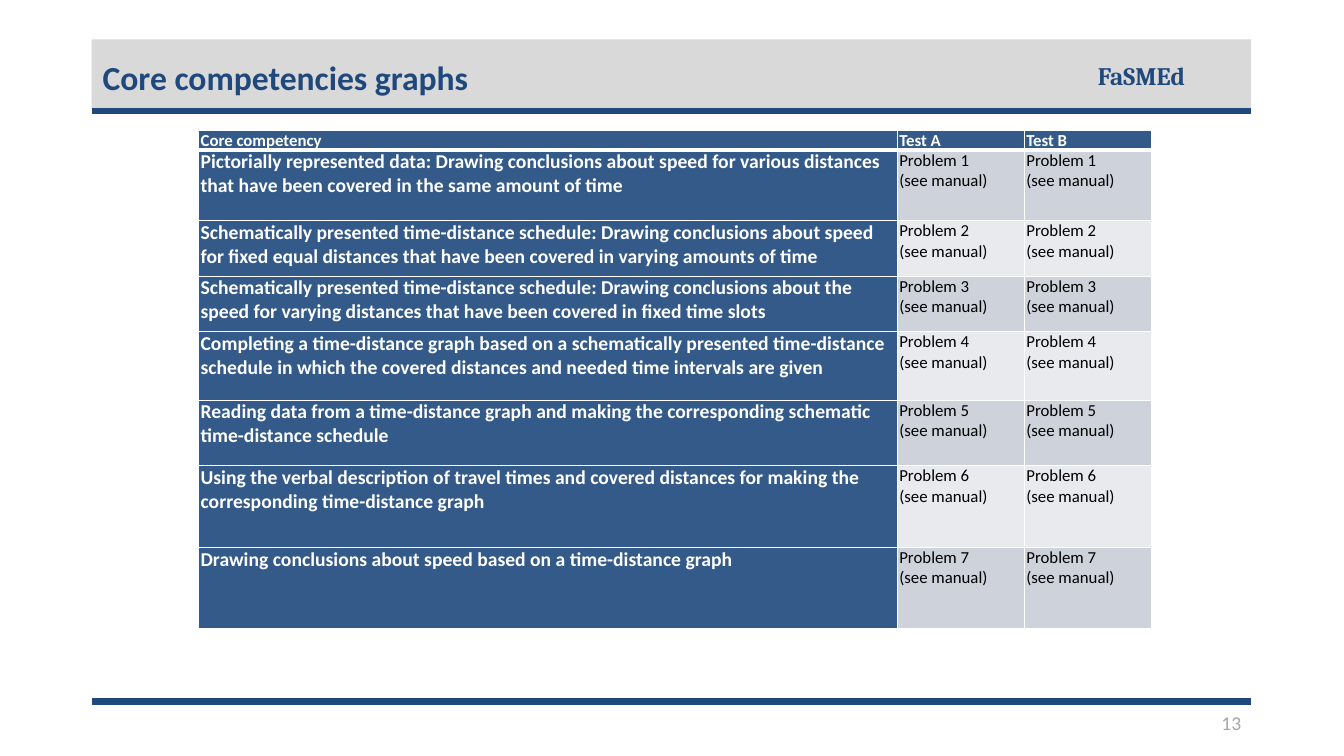
"""Build the slide on core competencies for graphs."""
from lxml.etree import SubElement
from pptx import Presentation
from pptx.dml.color import RGBColor
from pptx.enum.shapes import MSO_CONNECTOR as LINE, MSO_SHAPE as SHAPE
from pptx.enum.text import MSO_ANCHOR as ANCHOR, PP_ALIGN as ALIGN
from pptx.oxml.ns import qn
from pptx.util import Inches, Pt

NAVY, STEEL, WHITE = "1F497D", "345A8A", "FFFFFF"
BANDS = ["CED2DA", "E8EAED"]
HEADS = ["Core competency", "Test A", "Test B"]
SKILLS = [
    ("Pictorially represented data: Drawing conclusions about speed for various "
     "distances that have been covered in the same amount of time", 0.7),
    ("Schematically presented time-distance schedule: Drawing conclusions about speed "
     "for fixed equal distances that have been covered in varying amounts of time", 0.55),
    ("Schematically presented time-distance schedule: Drawing conclusions about the "
     "speed for varying distances that have been covered in fixed time slots", 0.55),
    ("Completing a time-distance graph based on a schematically presented time-distance "
     "schedule in which the covered distances and needed time intervals are given", 0.68),
    ("Reading data from a time-distance graph and making the corresponding schematic "
     "time-distance schedule", 0.65),
    ("Using the verbal description of travel times and covered distances for making the "
     "corresponding time-distance graph", 0.81),
    ("Drawing conclusions about speed based on a time-distance graph", 0.81),
]
WIDTHS = [6.93, 1.26, 1.26]
HEAD_H = 0.2
LEFT, RIGHT = 0.91, 12.41
RULES = [1.1, 6.96]
LABELS = [
    ("13", (10.44, 7, 1.97, 0.34), ANCHOR.MIDDLE, ALIGN.RIGHT,
     dict(size=14, name="Calibri", color="A6A6A6")),
    ("FaSMEd", (10.79, 0.55, 1.11, 0.4), ANCHOR.TOP, ALIGN.LEFT,
     dict(size=18, name="Cambria", color=NAVY, bold=True)),
    ("Core competencies graphs", (0.92, 0.41, 11.5, 0.71), ANCHOR.MIDDLE, ALIGN.LEFT,
     dict(size=24, name="Calibri", color=NAVY, bold=True)),
]


def paint(target, color):
    target.rgb = RGBColor.from_string(color)


def style(font, **look):
    for key, value in look.items():
        if key == "color":
            paint(font.color, value)
        else:
            setattr(font, key, Pt(value) if key == "size" else value)


def write(frame, text, look, align=ALIGN.LEFT):
    for i, line in enumerate(text.split("\n")):
        para = frame.paragraphs[0] if i == 0 else frame.add_paragraph()
        para.alignment = align
        run = para.add_run()
        run.text = line
        style(run.font, **look)


def border(cell, top, bottom):
    props = cell._tc.get_or_add_tcPr()
    sides = {"lnL": 1, "lnR": 1, "lnT": top, "lnB": bottom}
    for i, (side, width) in enumerate(sides.items()):
        edge = props.makeelement(qn(f"a:{side}"), {"w": str(Pt(width))})
        fill = SubElement(edge, qn("a:solidFill"))
        SubElement(fill, qn("a:srgbClr"), val=WHITE)
        props.insert(i, edge)


def draw_frame(slide):
    band = slide.shapes.add_shape(SHAPE.RECTANGLE, Inches(LEFT), Inches(0.39),
                                  Inches(RIGHT - LEFT), Inches(0.69))
    band.shadow.inherit = False
    band.fill.solid()
    paint(band.fill.fore_color, "D9D9D9")
    band.line.fill.background()
    for y in RULES:
        rule = slide.shapes.add_connector(LINE.STRAIGHT, Inches(LEFT), Inches(y),
                                          Inches(RIGHT), Inches(y))
        paint(rule.line.color, NAVY)
        rule.line.width = Pt(4.5)
        SubElement(rule._element.spPr, qn("a:effectLst"))


def draw_labels(slide):
    for text, place, anchor, align, look in LABELS:
        box = slide.shapes.add_textbox(*map(Inches, place))
        frame = box.text_frame
        frame.word_wrap = True
        frame.vertical_anchor = anchor
        write(frame, text, look, align)


def draw_table(slide):
    rows = [HEADS]
    for i, (skill, _) in enumerate(SKILLS, 1):
        rows.append([skill] + [f"Problem {i}\n(see manual)"] * 2)
    heights = [HEAD_H] + [height for _, height in SKILLS]
    table = slide.shapes.add_table(len(rows), len(HEADS), Inches(1.97), Inches(1.29),
                                   Inches(sum(WIDTHS)), Inches(sum(heights))).table
    for col, width in zip(table.columns, WIDTHS):
        col.width = Inches(width)
    for r, (texts, height) in enumerate(zip(rows, heights)):
        table.rows[r].height = Inches(height)
        for c, text in enumerate(texts):
            cell = table.cell(r, c)
            dark = r == 0 or c == 0
            cell.margin_left = cell.margin_right = Inches(0.02)
            cell.margin_top = cell.margin_bottom = 0
            cell.fill.solid()
            paint(cell.fill.fore_color, STEEL if dark else BANDS[(r - 1) % 2])
            border(cell, 3 if r == 1 else 1, 3 if r == 0 else 1)
            write(cell.text_frame, text, dict(
                size=14 if r and c == 0 else 12, name="Calibri", bold=dark,
                color=WHITE if dark else "000000"))


def main():
    deck = Presentation()
    deck.slide_width, deck.slide_height = Inches(13.33), Inches(7.5)
    slide = deck.slides.add_slide(deck.slide_layouts[6])
    draw_frame(slide)
    draw_labels(slide)
    draw_table(slide)
    deck.save("out.pptx")


if __name__ == "__main__":
    main()
